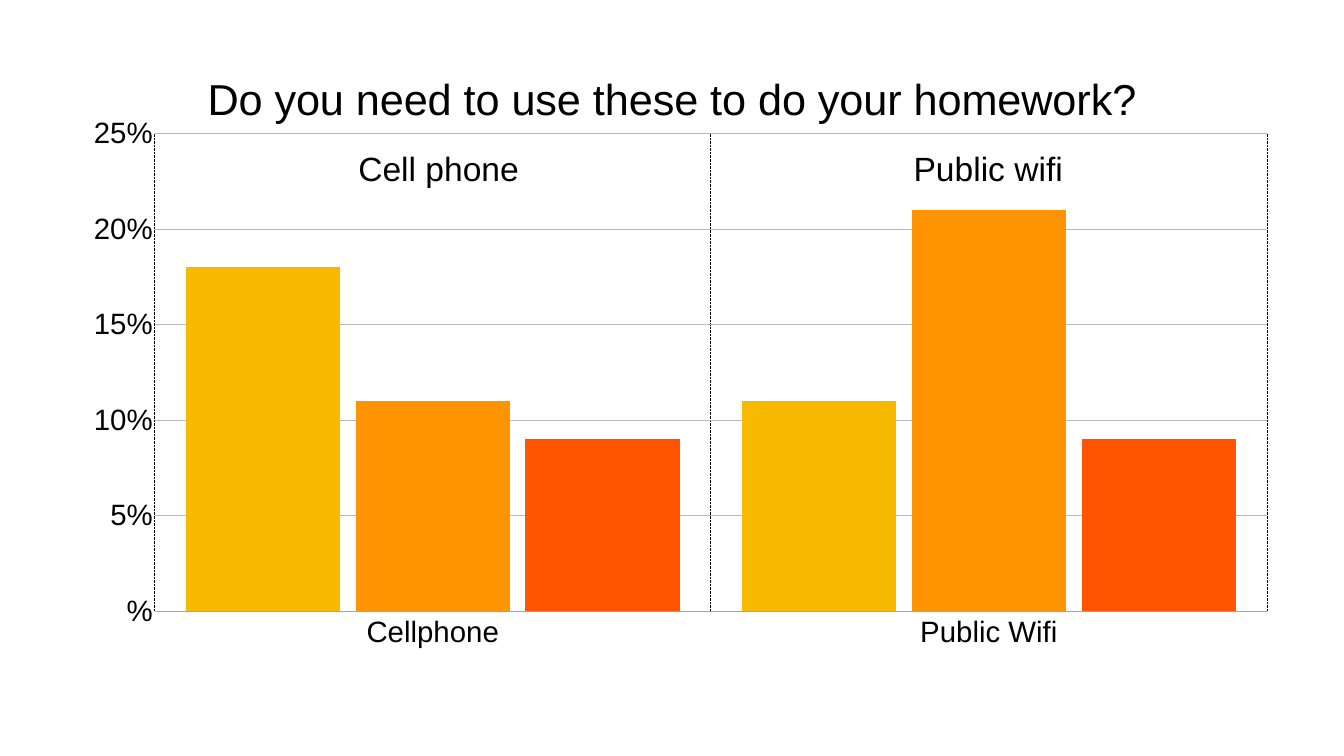
from dataclasses import dataclass

from pptx import Presentation, util as u
from pptx.chart.data import CategoryChartData
from pptx.dml.color import RGBColor
from pptx.enum import chart as charts, dml, text
from pptx.oxml import parse_xml
from pptx.oxml.ns import nsdecls


@dataclass(frozen=True)
class Theme:
    font: str = "Arial"
    ink: str = "000000"
    axis: str = "A4A4A4"
    grid: str = "B8B8B8"
    answers: tuple = ("F8BA00", "FF9300", "FF5400")
    title_size: float = 61.8
    heading_size: float = 48
    axis_size: float = 42


class SlideBuilder:
    def __init__(self, deck, theme):
        self.theme = theme
        self.width, self.height = deck.slide_width, deck.slide_height
        self.slide = deck.slides.add_slide(deck.slide_layouts[6])

    def area(self, left, top, width, height):
        return (int(left * self.width), int(top * self.height),
                int(width * self.width), int(height * self.height))

    def style_font(self, font, size):
        font.name, font.size, font.bold = self.theme.font, u.Pt(size), False
        font.color.rgb = RGBColor.from_string(self.theme.ink)

    def style_line(self, line, color, dash=None):
        line.color.rgb = RGBColor.from_string(color)
        line.width = u.Pt(1)
        line.dash_style = dash

    def heading(self, wording, left, top, width, height):
        box = self.slide.shapes.add_textbox(*self.area(left, top, width, height))
        frame = box.text_frame
        frame.word_wrap = False
        frame.auto_size = text.MSO_AUTO_SIZE.SHAPE_TO_FIT_TEXT
        frame.vertical_anchor = text.MSO_ANCHOR.MIDDLE
        frame.margin_left = frame.margin_right = u.Inches(0.06)
        frame.margin_top = frame.margin_bottom = u.Inches(0.06)
        paragraph = frame.paragraphs[0]
        paragraph.line_spacing = 1.1
        run = paragraph.add_run()
        run.text = wording
        self.style_font(run.font, self.theme.heading_size)

    def place_plot(self, chart, **shares):
        edges = "".join(f'<c:{edge} val="{share}"/>' for edge, share in shares.items())
        plot_area = chart.element.chart.plotArea
        for layout in plot_area.xpath("c:layout"):
            plot_area.remove(layout)
        plot_area.insert(0, parse_xml(
            f'<c:layout {nsdecls("c")}><c:manualLayout><c:layoutTarget val="inner"/>'
            f'<c:xMode val="edge"/><c:yMode val="edge"/>{edges}'
            '</c:manualLayout></c:layout>'))

    def column_chart(self, title, topics, answers, left, top, width, height):
        theme = self.theme
        data = CategoryChartData()
        data.categories = topics
        for name, shares in answers.items():
            data.add_series(name, shares)
        chart = self.slide.shapes.add_chart(
            charts.XL_CHART_TYPE.COLUMN_CLUSTERED,
            *self.area(left, top, width, height), data).chart
        self.style_font(chart.font, 10)
        chart.has_legend = False

        chart.has_title = True
        question = chart.chart_title.text_frame.paragraphs[0].add_run()
        question.text = title
        self.style_font(question.font, theme.title_size)
        chart.chart_title.include_in_layout = True
        self.place_plot(chart, x=0.07, y=0.136, w=0.925, h=0.765)

        plot = chart.plots[0]
        plot.gap_width, plot.overlap = 40, -10
        plot.vary_by_categories = False
        for series, color in zip(plot.series, theme.answers):
            series.format.fill.solid()
            series.format.fill.fore_color.rgb = RGBColor.from_string(color)
            series.format.line.fill.background()

        for axis in (chart.category_axis, chart.value_axis):
            axis.major_tick_mark = axis.minor_tick_mark = charts.XL_TICK_MARK.NONE
            axis.has_major_gridlines = True
            self.style_font(axis.tick_labels.font, theme.axis_size)

        topic_axis, share_axis = chart.category_axis, chart.value_axis
        topic_axis.tick_label_position = charts.XL_TICK_LABEL_POSITION.LOW
        self.style_line(topic_axis.format.line, theme.axis)
        self.style_line(topic_axis.major_gridlines.format.line, theme.ink,
                        dml.MSO_LINE.ROUND_DOT)
        share_axis.minimum_scale, share_axis.maximum_scale = 0, 25
        share_axis.major_unit = 5
        share_axis.tick_labels.number_format = '#,###"%"'
        share_axis.tick_labels.number_format_is_linked = False
        share_axis.format.line.fill.background()
        self.style_line(share_axis.major_gridlines.format.line, theme.grid)


def main():
    deck = Presentation()
    deck.slide_width, deck.slide_height = u.Inches(26.67), u.Inches(15)
    homework = SlideBuilder(deck, Theme())
    homework.column_chart(
        "Do you need to use these to do your homework?",
        ["Cellphone", "Public Wifi"],
        {"Series 1": (18, 11), "Series 2": (11, 21), "Series 3": (9, 9)},
        1.4 / 26.67, 0.97 / 15, 23.86 / 26.67, 12.38 / 15)
    for wording, left, width in (("Cell phone", 7.05, 3.32), ("Public wifi", 18.07, 3.16)):
        homework.heading(wording, left / 26.67, 0.19, width / 26.67, 0.06)
    deck.save("out.pptx")


if __name__ == "__main__":
    main()
